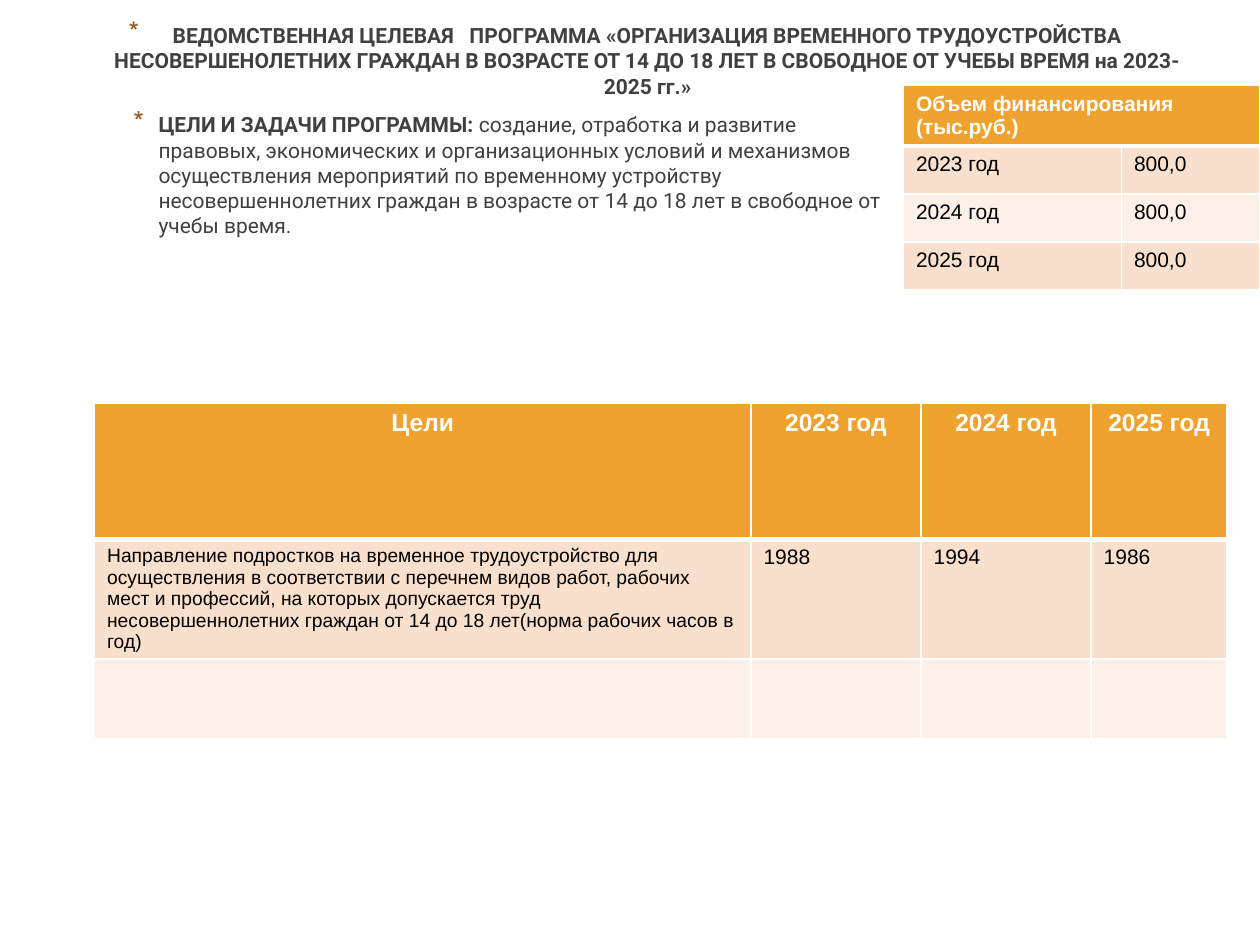
from dataclasses import dataclass

from lxml import etree
from pptx import Presentation
from pptx.dml.color import RGBColor
from pptx.enum import text as t
from pptx.oxml import ns
from pptx.util import Inches, Pt


@dataclass(frozen=True)
class Theme:
    head: str = "F0A22E"
    bands: tuple = ("F9E0CD", "FCF0E8")
    white: str = "FFFFFF"
    black: str = "000000"
    ink: str = "404040"
    mark: str = "91581F"
    font: str = "Roboto"
    grid: str = "Arial"
    small: int = 11
    base: int = 12
    large: int = 14


THEME = Theme()
YEARS = ("2023 год", "2024 год", "2025 год")
TITLE = ("ВЕДОМСТВЕННАЯ ЦЕЛЕВАЯ   ПРОГРАММА «ОРГАНИЗАЦИЯ ВРЕМЕННОГО "
         "ТРУДОУСТРОЙСТВА НЕСОВЕРШЕНОЛЕТНИХ ГРАЖДАН В ВОЗРАСТЕ ОТ 14 ДО 18 ЛЕТ "
         "В СВОБОДНОЕ ОТ УЧЕБЫ ВРЕМЯ на 2023-2025 гг.»")
AIMS = "ЦЕЛИ И ЗАДАЧИ ПРОГРАММЫ: "
DETAIL = ("создание, отработка и развитие правовых, экономических и "
          "организационных условий и механизмов осуществления мероприятий по "
          "временному устройству несовершеннолетних граждан в возрасте от 14 "
          "до 18 лет в свободное от учебы время.")
GOAL = ("Направление подростков на временное трудоустройство для осуществления "
        "в соответствии с перечнем видов работ, рабочих мест и профессий, на "
        "которых допускается труд несовершеннолетних граждан от 14 до 18 "
        "лет(норма рабочих часов в год)")


def write(para, words, size=THEME.base, font=THEME.font, color=THEME.ink,
          bold=False, align=t.PP_ALIGN.LEFT):
    para.alignment = align
    run = para.add_run()
    run.text = words
    run.font.size = Pt(size)
    run.font.name = font
    run.font.bold = bold
    run.font.color.rgb = RGBColor.from_string(color)


def add(parent, tag, **attrs):
    node = etree.SubElement(parent, ns.qn(tag))
    for key, val in attrs.items():
        node.set(key, str(val))
    return node


def bullet(para, left, hang, scale):
    """Give the paragraph a hanging star; scale is percent of the text size."""
    props = para._p.get_or_add_pPr()
    props.set("marL", str(Inches(left)))
    props.set("indent", str(-Inches(hang)))
    add(add(props, "a:buClr"), "a:srgbClr", val=THEME.mark)
    add(props, "a:buSzPct", val=scale * 1000)
    add(props, "a:buChar", char="*")


def place(shape, left, top, width, height):
    shape.left, shape.top = Inches(left), Inches(top)
    shape.width, shape.height = Inches(width), Inches(height)
    frame = shape.text_frame
    frame.word_wrap = True
    frame.auto_size = t.MSO_AUTO_SIZE.NONE
    frame.vertical_anchor = t.MSO_ANCHOR.TOP
    return frame.paragraphs[0]


def border(cell, top, bottom):
    """Draw white edges, 1 pt at the sides."""
    props = cell._tc.get_or_add_tcPr()
    edges = (("L", 1), ("R", 1), ("T", top), ("B", bottom))
    for spot, (side, width) in enumerate(edges):
        line = add(props, f"a:ln{side}", w=Pt(width))
        add(add(line, "a:solidFill"), "a:srgbClr", val=THEME.white)
        props.insert(spot, line)


def grid(slide, left, top, cols, rows):
    """Add a table with a header row and banded body rows."""
    frame = slide.shapes.add_table(
        len(rows), len(cols), Inches(left), Inches(top),
        Inches(sum(cols)), Inches(sum(rows)))
    table = frame.table
    table.horz_banding = False
    for col, width in zip(table.columns, cols):
        col.width = Inches(width)
    for i, (row, height) in enumerate(zip(table.rows, rows)):
        row.height = Inches(height)
        fill = THEME.bands[(i - 1) % 2] if i else THEME.head
        for cell in row.cells:
            cell.fill.solid()
            cell.fill.fore_color.rgb = RGBColor.from_string(fill)
            border(cell, 3 if i == 1 else 1, 1 if i else 3)
    return table


def label(cell, words, size=THEME.base, color=THEME.black, **style):
    write(cell.text_frame.paragraphs[0], words, size=size, color=color,
          font=THEME.grid, **style)


def funds(slide):
    table = grid(slide, 7.17, 0.68, (1.73, 1.1), (0.48, 0.38, 0.38, 0.38))
    table.cell(0, 0).merge(table.cell(0, 1))
    label(table.cell(0, 0), "Объем финансирования (тыс.руб.)",
          color=THEME.white, bold=True)
    for i, year in enumerate(YEARS, 1):
        label(table.cell(i, 0), year)
        label(table.cell(i, 1), "800,0")


def goals(slide):
    table = grid(slide, 0.75, 3.2, (5.21, 1.35, 1.35, 1.08), (1.08, 0.94, 0.63))
    for i, words in enumerate(("Цели",) + YEARS):
        label(table.cell(0, i), words, size=THEME.large, color=THEME.white,
              bold=True, align=t.PP_ALIGN.CENTER)
    label(table.cell(1, 0), GOAL, size=THEME.small)
    for i, hours in enumerate(("1988", "1994", "1986"), 1):
        label(table.cell(1, i), hours)


def main():
    deck = Presentation()
    deck.slide_width, deck.slide_height = Inches(10), Inches(7.5)
    slide = deck.slides.add_slide(deck.slide_layouts[5])

    head = place(slide.shapes.title, 0.28, 0.13, 9.37, 0.71)
    write(head, TITLE, bold=True, align=t.PP_ALIGN.CENTER)
    bullet(head, 0.35, 0.35, 128)

    funds(slide)

    box = slide.shapes.add_textbox(0, 0, 0, 0)
    aims = place(box, 0.91, 0.84, 6.22, 2.36)
    write(aims, AIMS, bold=True)
    write(aims, DETAIL)
    aims.space_before, aims.space_after = Pt(2.4), Pt(3)
    bullet(aims, 0.25, 0.2, 130)

    goals(slide)
    deck.save("out.pptx")


if __name__ == "__main__":
    main()
